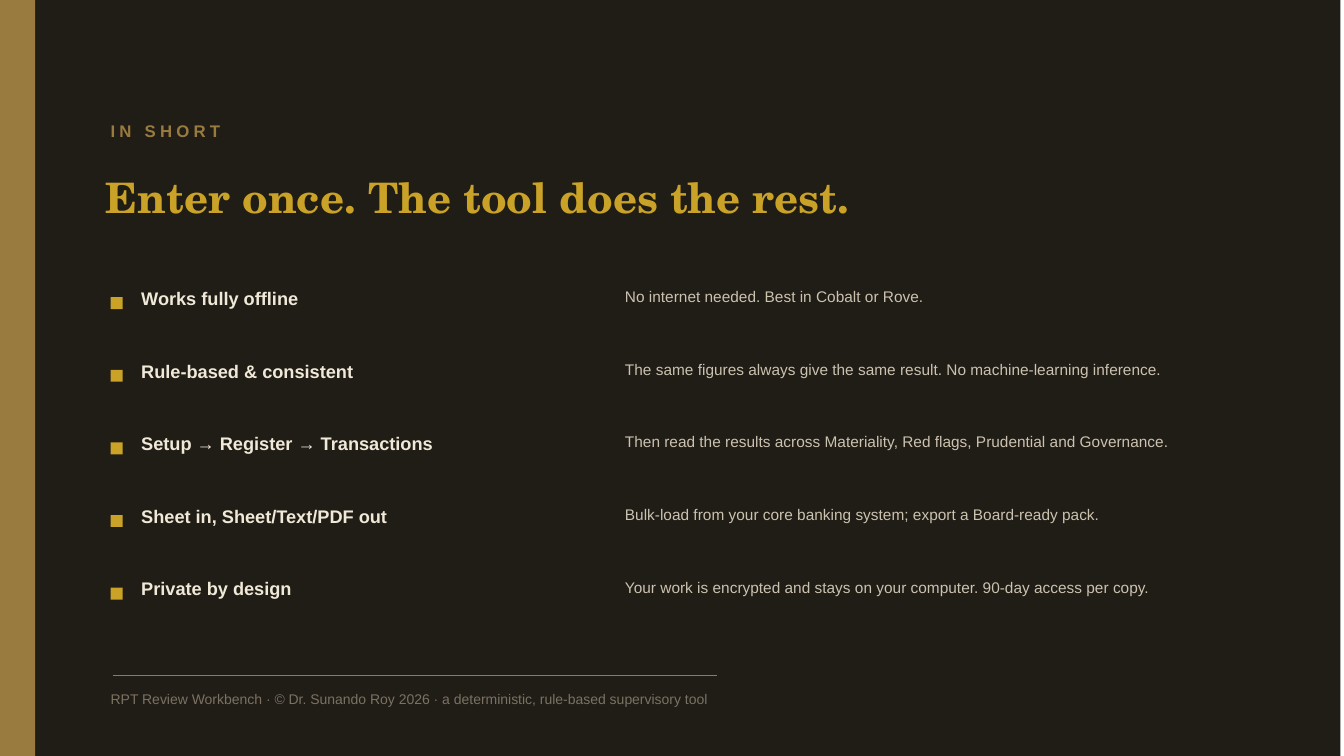
"""Build the dark closing slide with five summary points."""
from dataclasses import dataclass

from lxml import etree
from pptx import Presentation
from pptx.dml.color import RGBColor
from pptx.enum.shapes import MSO_CONNECTOR, MSO_SHAPE
from pptx.oxml.ns import qn
from pptx.slide import Slide
from pptx.util import Cm, Pt

RECTANGLE = MSO_SHAPE.RECTANGLE
STRAIGHT = MSO_CONNECTOR.STRAIGHT

INK = RGBColor(0x20, 0x1C, 0x16)
BRONZE = RGBColor(0x9A, 0x7B, 0x3F)
GOLD = RGBColor(0xC9, 0xA2, 0x27)
CREAM = RGBColor(0xF0, 0xE9, 0xD8)
SAND = RGBColor(0xCB, 0xC2, 0xB0)
TAUPE = RGBColor(0x7B, 0x72, 0x63)

BODY_FONT = "Arial"
TITLE_FONT = "TeX Gyre Schola"

SLIDE_HEIGHT = 19.05
LEFT_MARGIN = 2.79
FIRST_ROW_TOP = 7.24
ROW_PITCH = 1.83
MARKER_SIZE = 0.3
MARKER_DROP = 0.25
RULE_TOP = 17.02


@dataclass(frozen=True)
class Box:
    """Place and size in centimetres."""

    left: float
    top: float
    width: float
    height: float


@dataclass(frozen=True)
class TextStyle:
    """Look of one line of text."""

    size: float
    color: RGBColor
    bold: bool = False
    font: str = BODY_FONT
    spacing: float = 0


@dataclass(frozen=True)
class Point:
    """One summary point and its explanation."""

    heading: str
    detail: str


KICKER_STYLE = TextStyle(12, BRONZE, bold=True, spacing=3)
TITLE_STYLE = TextStyle(30, GOLD, bold=True, font=TITLE_FONT)
HEADING_STYLE = TextStyle(13, CREAM, bold=True)
DETAIL_STYLE = TextStyle(11, SAND)
FOOTER_STYLE = TextStyle(10, TAUPE)

POINTS = (
    Point("Works fully offline",
          "No internet needed. Best in Cobalt or Rove."),
    Point("Rule-based & consistent",
          "The same figures always give the same result. No machine-learning inference."),
    Point("Setup → Register → Transactions",
          "Then read the results across Materiality, Red flags, Prudential and Governance."),
    Point("Sheet in, Sheet/Text/PDF out",
          "Bulk-load from your core banking system; export a Board-ready pack."),
    Point("Private by design",
          "Your work is encrypted and stays on your computer. 90-day access per copy."),
)


def add_block(slide: Slide, box: Box, color: RGBColor) -> None:
    """Draw a plain filled rectangle."""
    shape = slide.shapes.add_shape(
        RECTANGLE, Cm(box.left), Cm(box.top), Cm(box.width), Cm(box.height))
    shape.shadow.inherit = False
    shape.fill.solid()
    shape.fill.fore_color.rgb = color
    shape.line.fill.background()


def add_text(slide: Slide, box: Box, text: str, style: TextStyle) -> None:
    """Write one line of text in a box without margins."""
    shape = slide.shapes.add_textbox(
        Cm(box.left), Cm(box.top), Cm(box.width), Cm(box.height))
    frame = shape.text_frame
    frame.word_wrap = True
    frame.margin_left = frame.margin_right = 0
    frame.margin_top = frame.margin_bottom = 0
    paragraph = frame.paragraphs[0]
    run = paragraph.add_run()
    run.text = text
    if style.spacing:
        run._r.get_or_add_rPr().set("spc", str(int(style.spacing * 100)))
    paragraph.font.name = style.font
    paragraph.font.size = Pt(style.size)
    paragraph.font.bold = style.bold
    paragraph.font.color.rgb = style.color


def add_rule(slide: Slide, left: float, top: float, width: float) -> None:
    """Draw the thin horizontal rule above the footer."""
    rule = slide.shapes.add_connector(
        STRAIGHT, Cm(left), Cm(top), Cm(left + width), Cm(top))
    rule.line.color.rgb = BRONZE
    rule.line.width = Pt(1)
    etree.SubElement(rule._element.spPr, qn("a:effectLst"))


def add_point(slide: Slide, point: Point, top: float) -> None:
    """Draw a marker, a heading and its explanation."""
    add_block(slide, Box(LEFT_MARGIN, top + MARKER_DROP, MARKER_SIZE, MARKER_SIZE), GOLD)
    add_text(slide, Box(3.56, top, 11.68, 1.02), point.heading, HEADING_STYLE)
    add_text(slide, Box(15.75, top, 16.76, 1.27), point.detail, DETAIL_STYLE)


def main() -> None:
    """Build and save the presentation."""
    presentation = Presentation()
    presentation.slide_width = Cm(33.87)
    presentation.slide_height = Cm(SLIDE_HEIGHT)
    slide = presentation.slides.add_slide(presentation.slide_layouts[6])

    add_block(slide, Box(0, 0, 33.78, SLIDE_HEIGHT), INK)
    add_block(slide, Box(0, 0, 0.89, SLIDE_HEIGHT), BRONZE)
    add_text(slide, Box(LEFT_MARGIN, 3.05, 25.4, 1.02), "IN SHORT", KICKER_STYLE)
    add_text(slide, Box(2.67, 4.32, 29.21, 2.03),
             "Enter once. The tool does the rest.", TITLE_STYLE)
    for index, point in enumerate(POINTS):
        add_point(slide, point, FIRST_ROW_TOP + index * ROW_PITCH)
    add_rule(slide, 2.84, RULE_TOP, 15.24)
    add_text(slide, Box(LEFT_MARGIN, 17.4, 27.94, 1.02),
             "RPT Review Workbench · © Dr. Sunando Roy 2026 · "
             "a deterministic, rule-based supervisory tool", FOOTER_STYLE)

    presentation.save("out.pptx")


if __name__ == "__main__":
    main()
